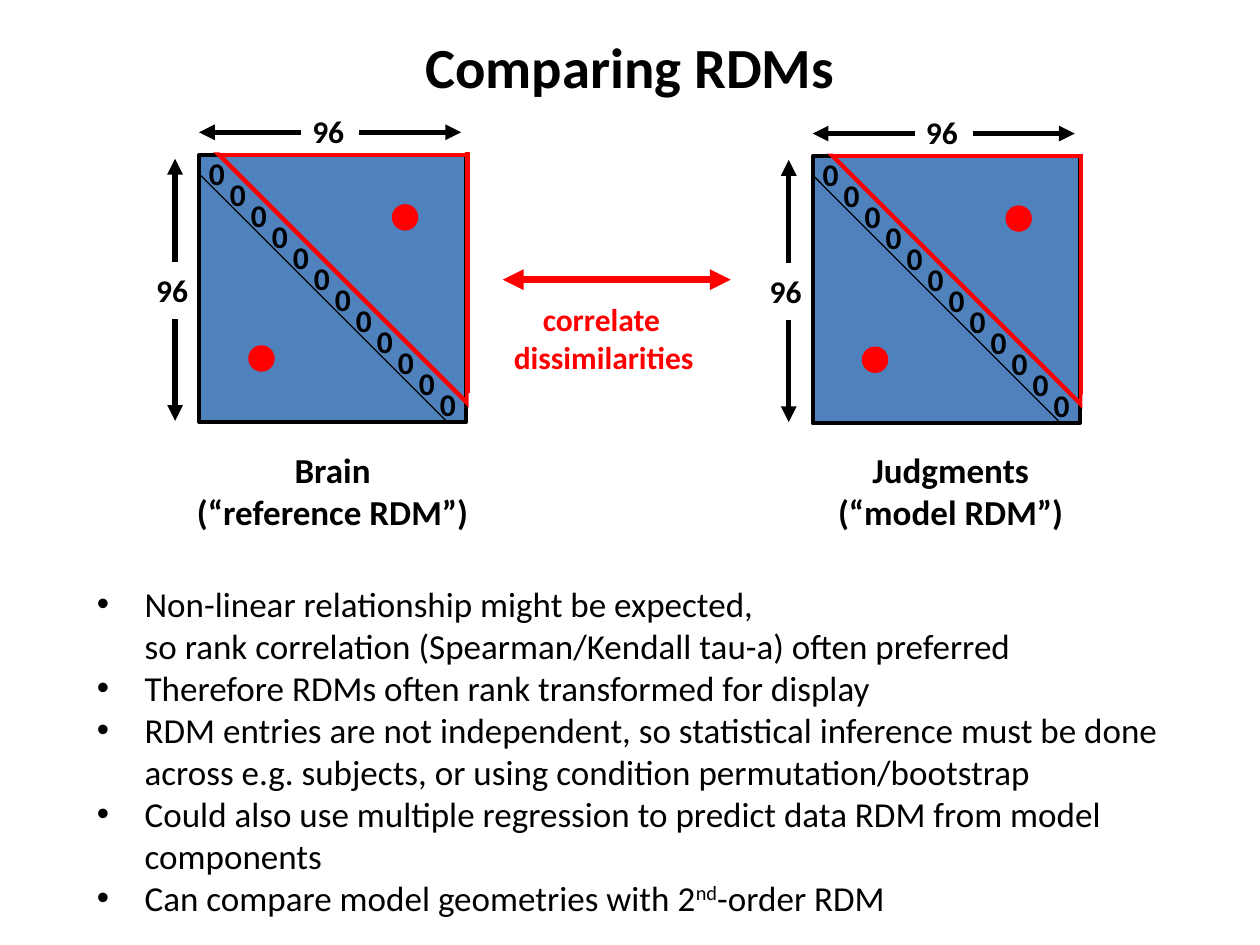
from dataclasses import dataclass

import lxml.etree
import pptx
import pptx.dml.color
import pptx.enum.shapes
import pptx.enum.text
import pptx.oxml.ns
import pptx.util

Inches = pptx.util.Inches
Pt = pptx.util.Pt
RGB = pptx.dml.color.RGBColor
Shapes = pptx.enum.shapes.MSO_SHAPE
Align = pptx.enum.text.PP_ALIGN
qn = pptx.oxml.ns.qn


@dataclass(frozen=True)
class Theme:
    font: str = "Calibri"
    black: RGB = RGB(0, 0, 0)
    white: RGB = RGB(255, 255, 255)
    red: RGB = RGB(255, 0, 0)
    blue: RGB = RGB(0x4F, 0x81, 0xBD)
    title: float = 32.4
    body: float = 20
    label: float = 18


THEME = Theme()
SIDE = 2.12
BAND = 0.15
ZEROS = 12
ZERO_STEP = 1 / 6

BULLETS = [
    "Non-linear relationship might be expected, \v"
    "so rank correlation (Spearman/Kendall tau-a) often preferred",
    "Therefore RDMs often rank transformed for display",
    "RDM entries are not independent, so statistical inference must be done "
    "across e.g. subjects, or using condition permutation/bootstrap",
    "Could also use multiple regression to predict data RDM from model components",
]


def format_runs(paragraph, size, color=THEME.black, bold=True):
    for run in paragraph.runs:
        run.font.name = THEME.font
        run.font.size = Pt(size)
        run.font.bold = bold
        run.font.color.rgb = color


def add_text(shapes, box, text, size=THEME.label, color=THEME.black, align=Align.LEFT,
             bold=True, wrap=False):
    shape = shapes.add_textbox(*map(Inches, box))
    text_frame = shape.text_frame
    text_frame.word_wrap = wrap
    text_frame.auto_size = pptx.enum.text.MSO_AUTO_SIZE.SHAPE_TO_FIT_TEXT
    text_frame.text = text
    for paragraph in text_frame.paragraphs:
        paragraph.alignment = align
        format_runs(paragraph, size, color, bold)
    return shape


def add_block(shapes, kind, box, fill, outline=None):
    shape = shapes.add_shape(kind, *map(Inches, box))
    shape.shadow.inherit = False
    shape.fill.solid()
    shape.fill.fore_color.rgb = fill
    if outline is None:
        shape.line.fill.background()
    else:
        shape.line.color.rgb = outline
        shape.line.width = Pt(2.25)
    return shape


def add_line(shapes, start, end, width, color=THEME.black, arrow_ends=()):
    connector = shapes.add_connector(
        pptx.enum.shapes.MSO_CONNECTOR.STRAIGHT, *map(Inches, (*start, *end)))
    connector.line.color.rgb = color
    connector.line.width = Pt(width)
    line = connector.line._get_or_add_ln()
    for arrow_end in arrow_ends:
        lxml.etree.SubElement(line, qn(f"a:{arrow_end}"), type="triangle")
    lxml.etree.SubElement(connector._element.spPr, qn("a:effectLst"))


def add_title(slide):
    title = slide.shapes.title
    title.left, title.top, title.width, title.height = map(Inches, (0.5, 0.3, 9, 0.45))
    title.text_frame.text = "Comparing RDMs"
    title.text_frame.vertical_anchor = pptx.enum.text.MSO_ANCHOR.MIDDLE
    title.text_frame.paragraphs[0].alignment = Align.CENTER
    format_runs(title.text_frame.paragraphs[0], THEME.title)


def add_matrix(slide, left, top):
    shapes = slide.shapes.add_group_shape().shapes
    right, bottom = left + SIDE, top + SIDE
    add_block(shapes, Shapes.RECTANGLE, (left, top, SIDE, SIDE), THEME.blue, THEME.black)
    add_line(shapes, (left + BAND, top), (right, bottom - BAND), 0.75)
    add_line(shapes, (left, top + BAND), (right - BAND, bottom), 0.75)
    for index in range(ZEROS):
        offset = index * ZERO_STEP
        add_text(shapes, (left - 0.02 + offset, top - 0.06 + offset, 0.34, 0.4), "0")
    for across, down in ((0.39, 1.51), (1.53, 0.39)):
        add_block(shapes, Shapes.OVAL, (left + across, top + down, 0.21, 0.21), THEME.red)

    arrow_y, arrow_x = top - 0.18, left - 0.19
    add_text(shapes, (left + 0.8, top - 0.39, 0.48, 0.4), "96")
    add_text(shapes, (left - 0.44, top + 0.87, 0.48, 0.4), "96")
    for inner, outer in ((0.81, 0), (1.27, 2.08)):
        add_line(shapes, (left + inner, arrow_y), (left + outer, arrow_y), 3,
                 arrow_ends=["tailEnd"])
    for inner, outer in ((0.85, 0.03), (1.3, 2.11)):
        add_line(shapes, (arrow_x, top + inner), (arrow_x, top + outer), 3,
                 arrow_ends=["tailEnd"])


def add_triangle_outline(slide, left, top):
    shapes = slide.shapes.add_group_shape().shapes
    right = left + SIDE
    sides = [
        ((left + 0.16, top), (right, top)),
        ((right + 0.01, top - 0.02), (right + 0.01, top + 1.95)),
        ((left + 0.11, top - 0.05), (right + 0.04, top + 2)),
    ]
    for start, end in sides:
        add_line(shapes, start, end, 2.5, THEME.red)
    for corner_mask in ((right + 0.02, top + 1.89, 0.08, 0.16),
                        (left + 0.04, top - 0.1, 0.24, 0.08)):
        add_block(shapes, Shapes.RECTANGLE, corner_mask, THEME.white)


def add_correlation(slide):
    add_line(slide.shapes, (3.99, 2.22), (5.8, 2.22), 4, THEME.red, ["headEnd", "tailEnd"])
    label = add_text(slide.shapes, (3.98, 2.33, 1.87, 0.7), "correlate\ndissimilarities",
                     color=THEME.red)
    properties = label.text_frame.paragraphs[0]._p.get_or_add_pPr()
    properties.set("marL", str(Inches(0.23)))


def add_bullets(slide):
    shape = add_text(slide.shapes, (0.67, 4.57, 9.06, 2.79), "\n".join(BULLETS),
                     THEME.body, bold=False, wrap=True)
    last = shape.text_frame.add_paragraph()
    for text in ("Can compare model geometries with 2", "nd", "-order RDM"):
        last.add_run().text = text
    format_runs(last, THEME.body, bold=False)
    last.runs[1]._r.get_or_add_rPr().set("baseline", "30000")
    for paragraph in shape.text_frame.paragraphs:
        properties = paragraph._p.get_or_add_pPr()
        properties.set("marL", str(Inches(0.38)))
        properties.set("indent", str(Inches(-0.38)))
        lxml.etree.SubElement(properties, qn("a:buFont"), typeface="Arial")
        lxml.etree.SubElement(properties, qn("a:buChar"), char="•")


def main():
    presentation = pptx.Presentation()
    presentation.slide_width, presentation.slide_height = Inches(10), Inches(7.5)
    slide = presentation.slides.add_slide(presentation.slide_layouts[5])
    add_title(slide)
    matrices = [
        (1.58, 1.23, "Brain\n(“reference RDM”)", (1.45, 3.51, 2.38, 0.77)),
        (6.45, 1.24, "Judgments\n(“model RDM”)", (6.54, 3.51, 2.01, 0.77)),
    ]
    for left, top, caption, caption_box in matrices:
        add_matrix(slide, left, top)
        add_text(slide.shapes, caption_box, caption, THEME.body, align=Align.CENTER)
        add_triangle_outline(slide, left, top)
    add_correlation(slide)
    add_bullets(slide)
    presentation.save("out.pptx")


if __name__ == "__main__":
    main()
